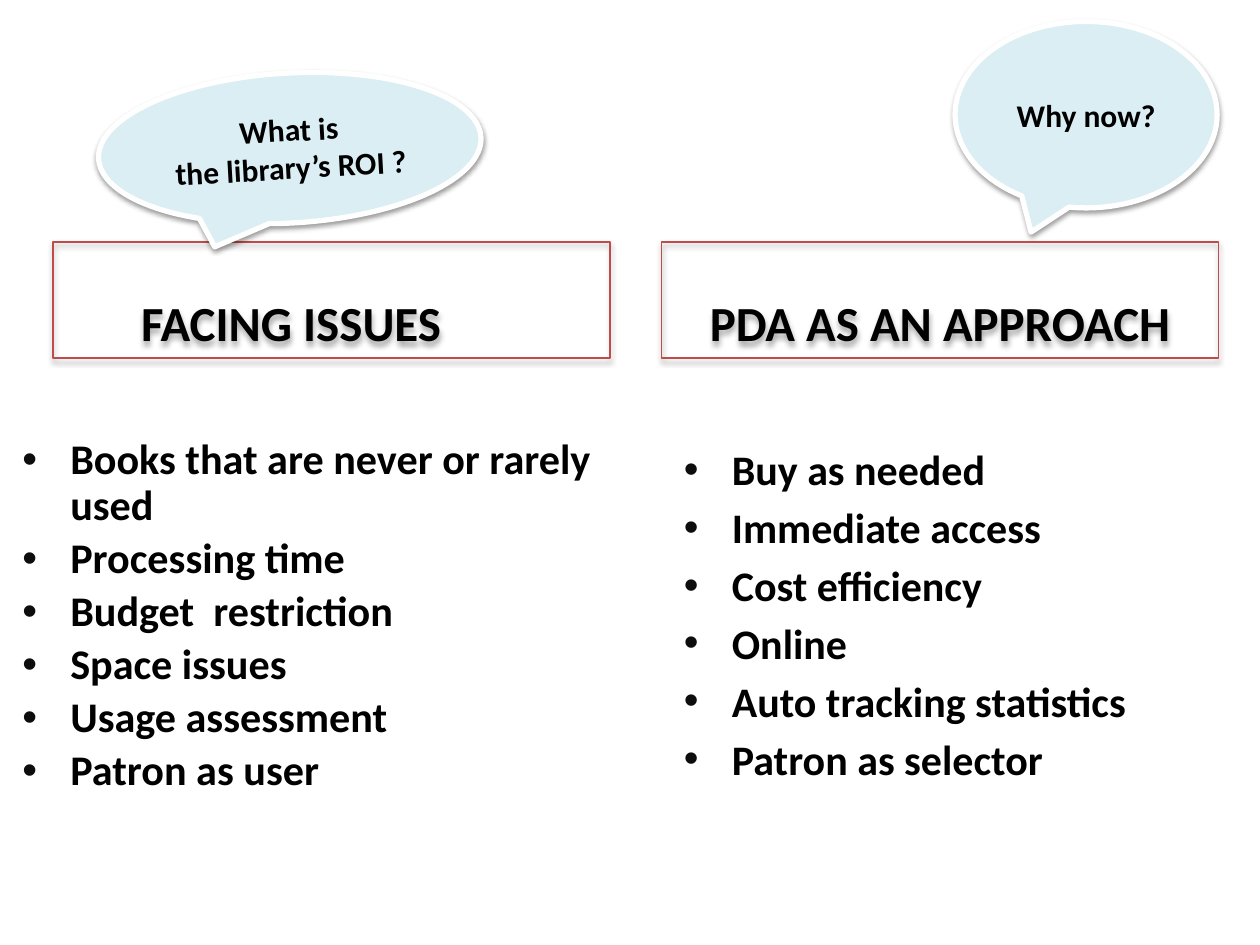
import pptx
import pptx.util
import pptx.dml.color
import pptx.enum.shapes
import pptx.enum.text
import pptx.oxml
import pptx.oxml.ns

Inches = pptx.util.Inches
Pt = pptx.util.Pt
SHAPES = pptx.enum.shapes.MSO_SHAPE
ANCHOR = pptx.enum.text.MSO_ANCHOR
ALIGN = pptx.enum.text.PP_ALIGN

COLORS = {
    "text": "000000",
    "bullet": "0D0D0D",
    "heading_line": "BF4C48",
    "callout_fill": "DBEEF4",
    "callout_line": "FFFFFF",
    "shadow": "000000",
}
NS = pptx.oxml.ns.nsdecls("a")


def rgb(name):
    return pptx.dml.color.RGBColor.from_string(COLORS[name])


def add_shadow(shape, distance, opacity):
    shape.shadow.inherit = False
    effects = shape._element.spPr.find(pptx.oxml.ns.qn("a:effectLst"))
    effects.append(pptx.oxml.parse_xml(
        f'<a:outerShdw {NS} blurRad="{Pt(3.1)}" dist="{Pt(distance)}" '
        f'dir="5400000" rotWithShape="0"><a:srgbClr val="{COLORS["shadow"]}">'
        f'<a:alpha val="{opacity * 1000}"/></a:srgbClr></a:outerShdw>'))


def add_bullet(paragraph):
    properties = paragraph._p.get_or_add_pPr()
    properties.set("marL", str(Inches(0.38)))
    properties.set("indent", str(-Inches(0.38)))
    for xml in (
        f'<a:buClr {NS}><a:srgbClr val="{COLORS["bullet"]}"/></a:buClr>',
        f'<a:buFont {NS} typeface="Arial"/>',
        f'<a:buChar {NS} char="•"/>',
    ):
        properties.append(pptx.oxml.parse_xml(xml))


def write_lines(frame, lines, size, align, bulleted=False):
    frame.word_wrap = True
    for index, line in enumerate(lines):
        paragraph = frame.paragraphs[0] if index == 0 else frame.add_paragraph()
        paragraph.text = line
        if bulleted:
            add_bullet(paragraph)
        paragraph.alignment = align
        paragraph.font.name = "Calibri"
        paragraph.font.size = Pt(size)
        paragraph.font.bold = True
        paragraph.font.color.rgb = rgb("text")


def add_heading(slide, box, title, right_inset):
    heading = slide.shapes.add_shape(SHAPES.RECTANGLE, *map(Inches, box))
    heading.fill.background()
    heading.line.color.rgb = rgb("heading_line")
    heading.line.width = Pt(1)
    add_shadow(heading, 1.8, 35)
    frame = heading.text_frame
    frame.vertical_anchor = ANCHOR.BOTTOM
    frame.margin_top = Inches(0.3)
    frame.margin_right = Inches(right_inset)
    write_lines(frame, [title], 28, ALIGN.CENTER)


def add_points(slide, box, points, size, line_spacing, top_inset):
    frame = slide.shapes.add_textbox(*map(Inches, box)).text_frame
    frame.margin_top = Inches(top_inset)
    write_lines(frame, points, size, ALIGN.LEFT, bulleted=True)
    for paragraph in frame.paragraphs:
        paragraph.line_spacing = line_spacing
        paragraph.space_before = Pt(4.3)


def add_callout(slide, box, lines, rotation=0):
    callout = slide.shapes.add_shape(SHAPES.OVAL_CALLOUT, *map(Inches, box))
    callout.adjustments[0] = -0.21
    callout.adjustments[1] = 0.63
    callout.rotation = rotation
    callout.fill.solid()
    callout.fill.fore_color.rgb = rgb("callout_fill")
    callout.line.color.rgb = rgb("callout_line")
    callout.line.width = Pt(3)
    add_shadow(callout, 1.6, 38)
    callout.text_frame.vertical_anchor = ANCHOR.MIDDLE
    write_lines(callout.text_frame, lines, 18, ALIGN.CENTER)


def main():
    deck = pptx.Presentation()
    deck.slide_width, deck.slide_height = Inches(10), Inches(7.5)
    slide = deck.slides.add_slide(deck.slide_layouts[6])

    issues = ["Books that are never or rarely used", "Processing time",
              "Budget  restriction", "Space issues", "Usage assessment",
              "Patron as user"]
    benefits = ["Buy as needed", "Immediate access", "Cost efficiency",
                "Online", "Auto tracking statistics", "Patron as selector"]

    add_heading(slide, (0.42, 1.92, 4.42, 0.92), "FACING ISSUES", 0.74)
    add_points(slide, (0.08, 3, 5.17, 4.08), issues, 24.1, 0.9, 0.48)
    add_points(slide, (5.33, 3, 4.42, 3.5), benefits, 24, 1.0, 0.52)
    add_heading(slide, (5.25, 1.92, 4.42, 0.92), "PDA AS AN APPROACH", 0.1)
    add_callout(slide, (7.58, 0.17, 2.08, 1.48), ["Why now?"])
    add_callout(slide, (0.78, 0.58, 3.04, 1.19),
                ["What is", "the library’s ROI ?"], 356.8)
    deck.save("out.pptx")


if __name__ == "__main__":
    main()
